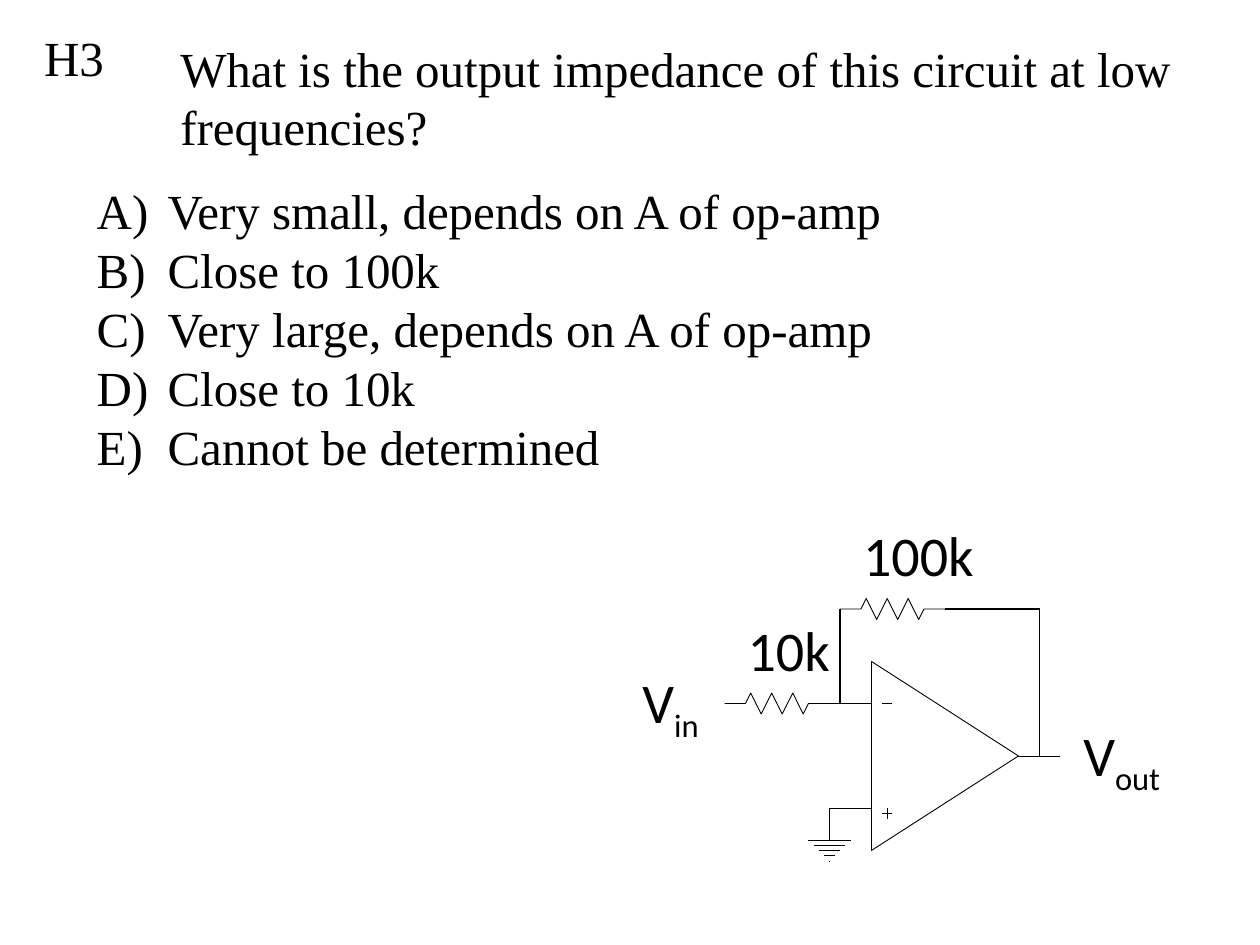
from typing import NamedTuple

from lxml import etree
from pptx import Presentation
from pptx.dml.color import RGBColor
from pptx.enum.shapes import MSO_CONNECTOR
from pptx.enum.text import MSO_ANCHOR, MSO_AUTO_SIZE, PP_ALIGN
from pptx.oxml.ns import qn
from pptx.util import Cm, Pt

STRAIGHT = MSO_CONNECTOR.STRAIGHT
TOP = MSO_ANCHOR.TOP
LEFT = PP_ALIGN.LEFT
FIXED = MSO_AUTO_SIZE.NONE

SERIF, SANS = "Times New Roman", "Calibri"
INK = "000000"
THIN, THICK = 0.5, 0.75
STEP = Cm(2.54) / 24  # the circuit is drawn on a grid of 24 steps to the inch


class Wire(NamedTuple):
    x1: float
    y1: float
    x2: float
    y2: float
    width: float = THIN


class Label(NamedTuple):
    left: float
    top: float
    width: float
    height: float
    text: str
    sub: str = ""
    font: str = SANS
    size: int = 32


WIRES = [
    Wire(158, 134, 166, 134),  # inverting input
    Wire(158, 154, 166, 154),  # other input
    Wire(194, 144, 202, 144),  # output
    Wire(168, 134, 170, 134),  # minus sign
    Wire(169, 154, 169, 156),  # plus sign
    Wire(168, 155, 170, 155),
    Wire(160, 116, 160, 134, THICK),  # feedback loop
    Wire(198, 144, 198, 116, THICK),
    Wire(180, 116, 198, 116, THICK),
    Wire(158, 154, 158, 160),  # down to ground
]
GROUND = [
    Wire(158 - half, 160 + row, 158 + half, 160 + row)
    for row, half in enumerate([4, 3, 2, 1, 0.1])
]
AMP = [(194, 144), (166, 162), (166, 126)]
ZIGZAG = [(0, 0), (4, 0), (5, -2), (7, 2), (9, -2),
          (11, 2), (13, -2), (15, 2), (16, 0), (20, 0)]
STARTS = [(138, 134), (160, 116)]

LABELS = [
    Label(0.64, 0.43, 1.73, 1.45, "H3", font=SERIF, size=28),
    Label(14.82, 12.28, 2.18, 1.63, "10k"),
    Label(17.15, 10.37, 2.77, 1.63, "100k"),
    Label(12.7, 13.34, 1.73, 1.63, "V", "in"),
    Label(21.59, 14.4, 2.16, 1.63, "V", "out"),
]
QUESTION = "What is the output impedance of this circuit at low frequencies?"
CHOICES = [
    "Very small, depends on A of op-amp",
    "Close to 100k",
    "Very large, depends on A of op-amp",
    "Close to 10k",
    "Cannot be determined",
]


def color(code: str) -> RGBColor:
    return RGBColor.from_string(code)


def style(para, font: str, size: int) -> None:
    para.font.name = font
    para.font.size = Pt(size)
    para.font.color.rgb = color(INK)
    para.alignment = LEFT


def stroke(shape, width: float) -> None:
    shape.line.color.rgb = color(INK)
    shape.line.width = Pt(width)


def draw_wire(slide, wire: Wire) -> None:
    ends = [round(v * STEP) for v in wire[:4]]
    line = slide.shapes.add_connector(STRAIGHT, *ends)
    stroke(line, wire.width)
    etree.SubElement(line._element.spPr, qn("a:effectLst"))


def draw_path(slide, points: list, close: bool = False) -> None:
    pen = slide.shapes.build_freeform(*points[0], scale=STEP)
    pen.add_line_segments(points[1:], close=close)
    shape = pen.convert_to_shape()
    shape.fill.background()
    shape.shadow.inherit = False
    stroke(shape, THIN)


def draw_label(slide, label: Label) -> None:
    box = slide.shapes.add_textbox(*[Cm(v) for v in label[:4]])
    box.text_frame.word_wrap = False
    para = box.text_frame.paragraphs[0]
    para.add_run().text = label.text
    style(para, label.font, label.size)
    if label.sub:
        run = para.add_run()
        run.text = label.sub
        run._r.get_or_add_rPr().set("baseline", "-25000")


def draw_title(slide) -> None:
    title = slide.shapes.title
    title.left, title.top = Cm(3.38), Cm(0.64)
    title.width, title.height = Cm(20.96), Cm(2.64)
    frame = title.text_frame
    frame.text = QUESTION
    frame.word_wrap = True
    frame.auto_size = FIXED
    frame.vertical_anchor = TOP
    style(frame.paragraphs[0], SERIF, 28)


def draw_choices(slide) -> None:
    box = slide.shapes.add_textbox(Cm(1.7), Cm(3.52), Cm(22.86), Cm(6.2))
    frame = box.text_frame
    frame.word_wrap = True
    frame.text = "\n".join(CHOICES)
    for para in frame.paragraphs:
        style(para, SERIF, 28)
        props = para._p.get_or_add_pPr()
        props.set("marL", str(Cm(1.43)))
        props.set("indent", str(-Cm(1.43)))
        mark = etree.Element(qn("a:buAutoNum"), type="alphaUcParenR")
        props.insert_element_before(mark, "a:tabLst", "a:defRPr", "a:extLst")


def main() -> None:
    deck = Presentation()
    deck.slide_width, deck.slide_height = Cm(25.4), Cm(19.05)
    slide = deck.slides.add_slide(deck.slide_layouts[5])
    draw_title(slide)
    draw_path(slide, AMP, close=True)
    for left, mid in STARTS:
        draw_path(slide, [(left + x, mid + y) for x, y in ZIGZAG])
    for wire in WIRES + GROUND:
        draw_wire(slide, wire)
    for label in LABELS:
        draw_label(slide, label)
    draw_choices(slide)
    deck.save("out.pptx")


if __name__ == "__main__":
    main()
